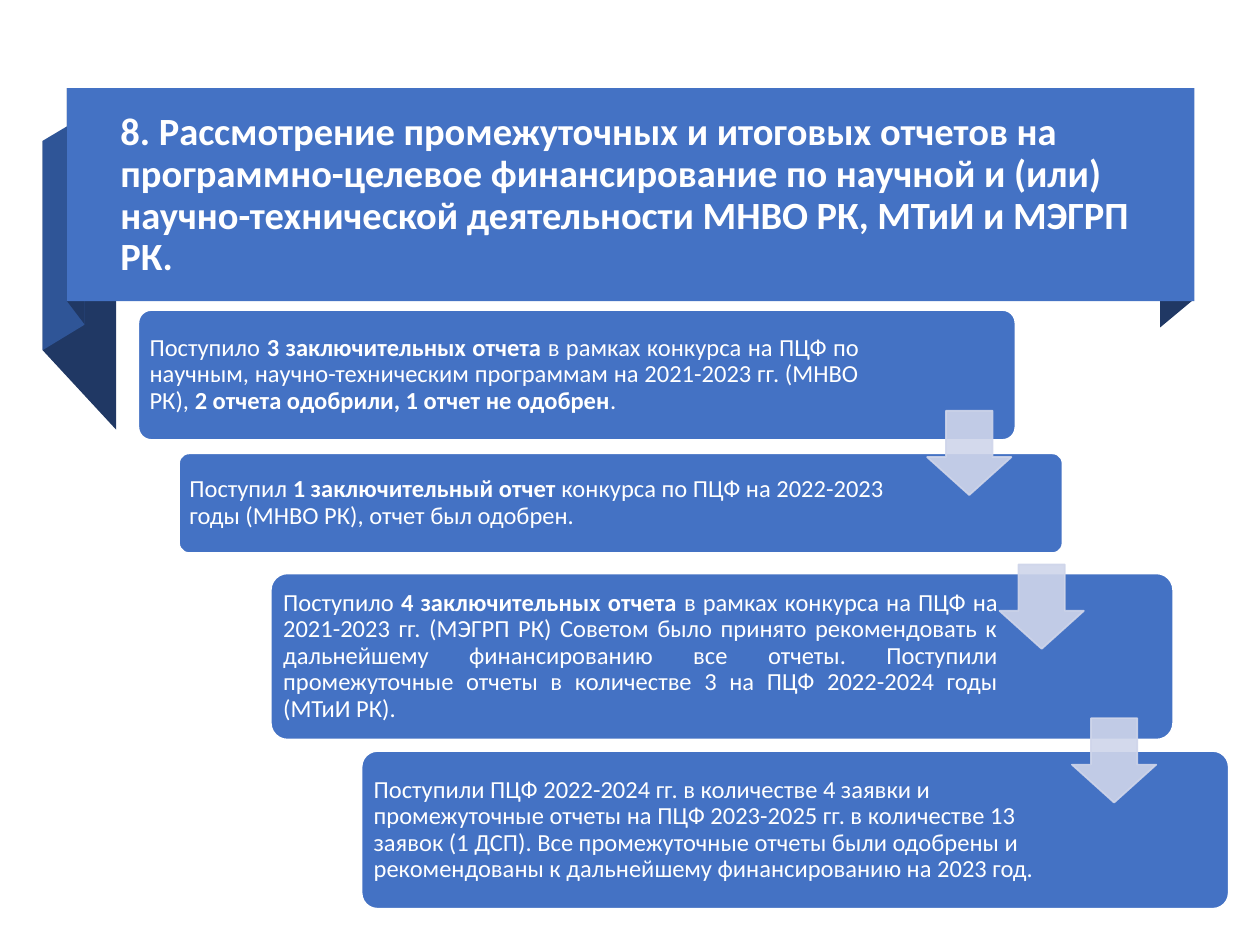
from dataclasses import dataclass

from lxml.etree import SubElement
from pptx import Presentation
from pptx.dml.color import RGBColor
from pptx.enum.shapes import MSO_SHAPE
from pptx.enum.text import MSO_ANCHOR, PP_ALIGN
from pptx.oxml.ns import qn
from pptx.util import Cm, Pt


@dataclass(frozen=True)
class Theme:
    blue: str = "4472C4"
    middle: str = "2F5597"
    navy: str = "203864"
    pale: str = "CFD5EA"
    white: str = "FFFFFF"
    font: str = "Calibri"
    title_size: int = 22
    body_size: int = 14
    arrow_opacity: int = 90


THEME = Theme()

FOLDS = [
    (THEME.navy, [(24.05, 6.05), (23.39, 6.6), (23.39, 2.31), (24.05, 1.78)]),
    (THEME.navy, [(2.34, 8.66), (0.86, 7.06), (0.86, 2.84), (2.34, 4.45)]),
    (THEME.middle, [(1.7, 6.55), (0.86, 7.06), (0.86, 2.84), (1.7, 2.34)]),
    (THEME.navy, [(1.7, 6.53), (1.35, 6.07), (1.35, 1.78), (1.7, 2.26)]),
]

TITLE = (
    "8. Рассмотрение промежуточных и итоговых отчетов на программно-целевое "
    "финансирование по научной и (или) научно-технической деятельности "
    "МНВО РК, МТиИ и МЭГРП РК."
)

CARDS = [
    ((2.79, 6.25, 17.68, 2.62), 3.07, PP_ALIGN.JUSTIFY, [
        ("Поступило ", False),
        ("3 заключительных отчета", True),
        (" в рамках конкурса на ПЦФ по научным, научно-техническим программам "
         "на 2021-2023 гг. (МНВО РК), ", False),
        ("2 отчета одобрили, 1 отчет не одобрен", True),
        (".", False),
    ]),
    ((3.61, 9.14, 17.81, 2.01), 3.38, PP_ALIGN.LEFT, [
        ("Поступил ", False),
        ("1 заключительный отчет", True),
        (" конкурса по ПЦФ на 2022-2023 годы (МНВО РК), отчет был одобрен.", False),
    ]),
    ((5.46, 11.56, 18.19, 3.35), 3.43, PP_ALIGN.JUSTIFY, [
        ("Поступило ", False),
        ("4 заключительных отчета", True),
        (" в рамках конкурса на ПЦФ на 2021-2023 гг. (МЭГРП РК) Советом было "
         "принято рекомендовать к дальнейшему финансированию все отчеты. "
         "Поступили промежуточные отчеты в количестве 3 на ПЦФ 2022-2024 годы "
         "(МТиИ РК).", False),
    ]),
    ((7.29, 15.14, 17.48, 3.18), 3.3, PP_ALIGN.LEFT, [
        ("Поступили ПЦФ 2022-2024 гг. в количестве 4 заявки и промежуточные "
         "отчеты на ПЦФ 2023-2025 гг. в количестве 13 заявок (1 ДСП). Все "
         "промежуточные отчеты были одобрены и рекомендованы к дальнейшему "
         "финансированию на 2023 год.", False),
    ]),
]


def set_values(target, values):
    for name, value in values.items():
        setattr(target, name, value)


def paint(shape, fill, line=None):
    shape.shadow.inherit = False
    shape.fill.solid()
    shape.fill.fore_color.rgb = RGBColor.from_string(fill)
    if line is None:
        shape.line.fill.background()
    else:
        shape.line.color.rgb = RGBColor.from_string(line)
        shape.line.width = Pt(1)


def write_text(shape, runs, size, align, insets):
    left, top, right, bottom = map(Cm, insets)
    set_values(shape.text_frame, {
        "word_wrap": True,
        "vertical_anchor": MSO_ANCHOR.MIDDLE,
        "margin_left": left,
        "margin_top": top,
        "margin_right": right,
        "margin_bottom": bottom,
    })
    paragraph = shape.text_frame.paragraphs[0]
    set_values(paragraph, {"alignment": align, "line_spacing": 0.9})
    for text, bold in runs:
        run = paragraph.add_run()
        run.text = text
        set_values(run.font, {"name": THEME.font, "size": Pt(size), "bold": bold})
        run.font.color.rgb = RGBColor.from_string(THEME.white)


def add_fold(slide, color, points):
    start, *others = [(Cm(x), Cm(y)) for x, y in points]
    builder = slide.shapes.build_freeform(*start)
    builder.add_line_segments(others, close=True)
    paint(builder.convert_to_shape(), color)


def add_banner(slide):
    for color, points in FOLDS:
        add_fold(slide, color, points)
    banner = slide.shapes.add_shape(
        MSO_SHAPE.RECTANGLE, Cm(1.35), Cm(1.78), Cm(22.73), Cm(4.29))
    paint(banner, THEME.blue)
    title = slide.shapes.add_textbox(Cm(2.18), Cm(2.11), Cm(21.46), Cm(3.68))
    write_text(title, [(TITLE, True)], THEME.title_size, PP_ALIGN.LEFT,
               (0.25, 0.13, 0.25, 0.13))


def add_card(slide, box, right_inset, align, runs):
    card = slide.shapes.add_shape(MSO_SHAPE.ROUNDED_RECTANGLE, *map(Cm, box))
    card.adjustments[0] = 0.1
    paint(card, THEME.blue, THEME.white)
    write_text(card, runs, THEME.body_size, align, (0.15, 0.15, right_inset, 0.15))


def add_arrow(slide, left, top):
    arrow = slide.shapes.add_shape(
        MSO_SHAPE.DOWN_ARROW, Cm(left), Cm(top), Cm(1.7), Cm(1.7))
    arrow.adjustments[0] = 0.55
    arrow.adjustments[1] = 0.45
    paint(arrow, THEME.pale, THEME.pale)
    for color in arrow.element.spPr.iter(qn("a:srgbClr")):
        SubElement(color, qn("a:alpha"), val=str(THEME.arrow_opacity * 1000))


def main():
    presentation = Presentation()
    set_values(presentation, {"slide_width": Cm(25.4), "slide_height": Cm(19.05)})
    slide = presentation.slides.add_slide(presentation.slide_layouts[6])
    add_banner(slide)
    for card in CARDS:
        add_card(slide, *card)
    for step in range(len(CARDS) - 1):
        add_arrow(slide, 18.69 + 1.46 * step, 8.28 + 3.1 * step)
    presentation.save("out.pptx")


if __name__ == "__main__":
    main()
